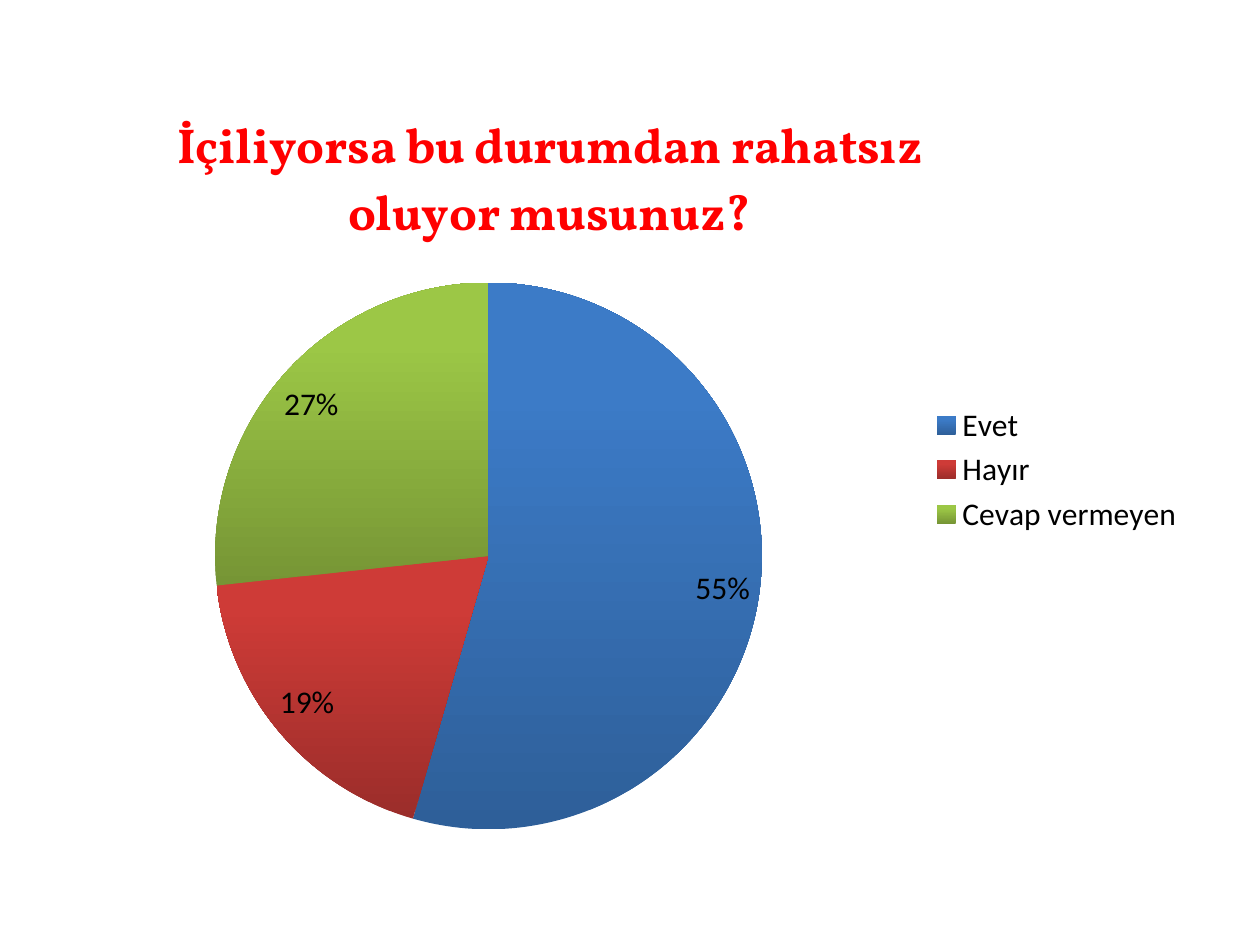
from lxml.etree import SubElement
from pptx import Presentation
from pptx.chart.data import CategoryChartData
from pptx.dml.color import RGBColor
from pptx.enum.chart import XL_CHART_TYPE, XL_LABEL_POSITION, XL_LEGEND_POSITION
from pptx.oxml.ns import qn
from pptx.util import Pt

QUESTION = "İçiliyorsa bu durumdan rahatsız oluyor musunuz?"
ANSWERS = {
    "Evet": (55, "2E5F99", "3C7BC7"),
    "Hayır": (19, "9B2D2A", "CE3B37"),
    "Cevap vermeyen": (27, "769535", "9CC746"),
}


def color(hex_code):
    return RGBColor.from_string(hex_code)


def style_font(font, name, size, hex_code, bold=False):
    font.name, font.size, font.bold = name, Pt(size), bold
    font.color.rgb = color(hex_code)


def add_answer_pie(slide, left, top, width, height):
    answers = CategoryChartData()
    answers.categories = list(ANSWERS)
    answers.add_series(QUESTION, [share for share, _, _ in ANSWERS.values()])
    pie = slide.shapes.add_chart(
        XL_CHART_TYPE.PIE, Pt(left), Pt(top), Pt(width), Pt(height), answers
    ).chart
    style_font(pie.font, "Calibri", 18, "000000")
    return pie


def place(element, position, **settings):
    """Set a manual layout, in fractions of the chart, as the child at position."""
    layout = element.find(qn("c:layout"))
    if layout is None:
        layout = SubElement(element, qn("c:layout"))
        element.insert(position, layout)
    manual = SubElement(layout, qn("c:manualLayout"))
    for tag, value in settings.items():
        SubElement(manual, qn(f"c:{tag}")).set("val", str(value))


def set_title(pie):
    pie.has_title = True
    title = pie.chart_title
    title.include_in_layout = False
    title.text_frame.text = QUESTION
    style_font(title.text_frame.paragraphs[0].font, "Vollkorn", 28, "FF0000", bold=True)
    place(title._element, 1, xMode="edge", yMode="edge", x=0.1, y=0.01)


def set_legend(pie):
    pie.has_legend = True
    pie.legend.position = XL_LEGEND_POSITION.RIGHT
    pie.legend.include_in_layout = False
    style_font(pie.legend.font, "Calibri", 18, "000000")


def set_labels(plot):
    plot.vary_by_categories = True
    plot.has_data_labels = True
    labels = plot.data_labels
    labels.show_value = True
    labels.number_format = '0"%"'
    labels.number_format_is_linked = False
    labels.position = XL_LABEL_POSITION.BEST_FIT
    style_font(labels.font, "Calibri", 18, "000000")


def shade_slices(series):
    for index, (_, dark, light) in enumerate(ANSWERS.values()):
        fill = series.points[index].format.fill
        fill.gradient()
        fill.gradient_angle = 90
        for stop, hex_code, position in zip(fill.gradient_stops, (dark, light), (0, 0.8)):
            stop.color.rgb = color(hex_code)
            stop.position = position


def main():
    deck = Presentation()
    deck.slide_width, deck.slide_height = Pt(720), Pt(540)
    slide = deck.slides.add_slide(deck.slide_layouts[6])
    pie = add_answer_pie(slide, 31, 54.5, 653, 428)
    set_title(pie)
    set_legend(pie)
    set_labels(pie.plots[0])
    shade_slices(pie.plots[0].series[0])
    place(
        pie.plots[0]._element.getparent(), 0,
        layoutTarget="inner", xMode="edge", yMode="edge", x=0.14, y=0.25, w=0.48, h=0.73,
    )
    deck.save("out.pptx")


if __name__ == "__main__":
    main()
